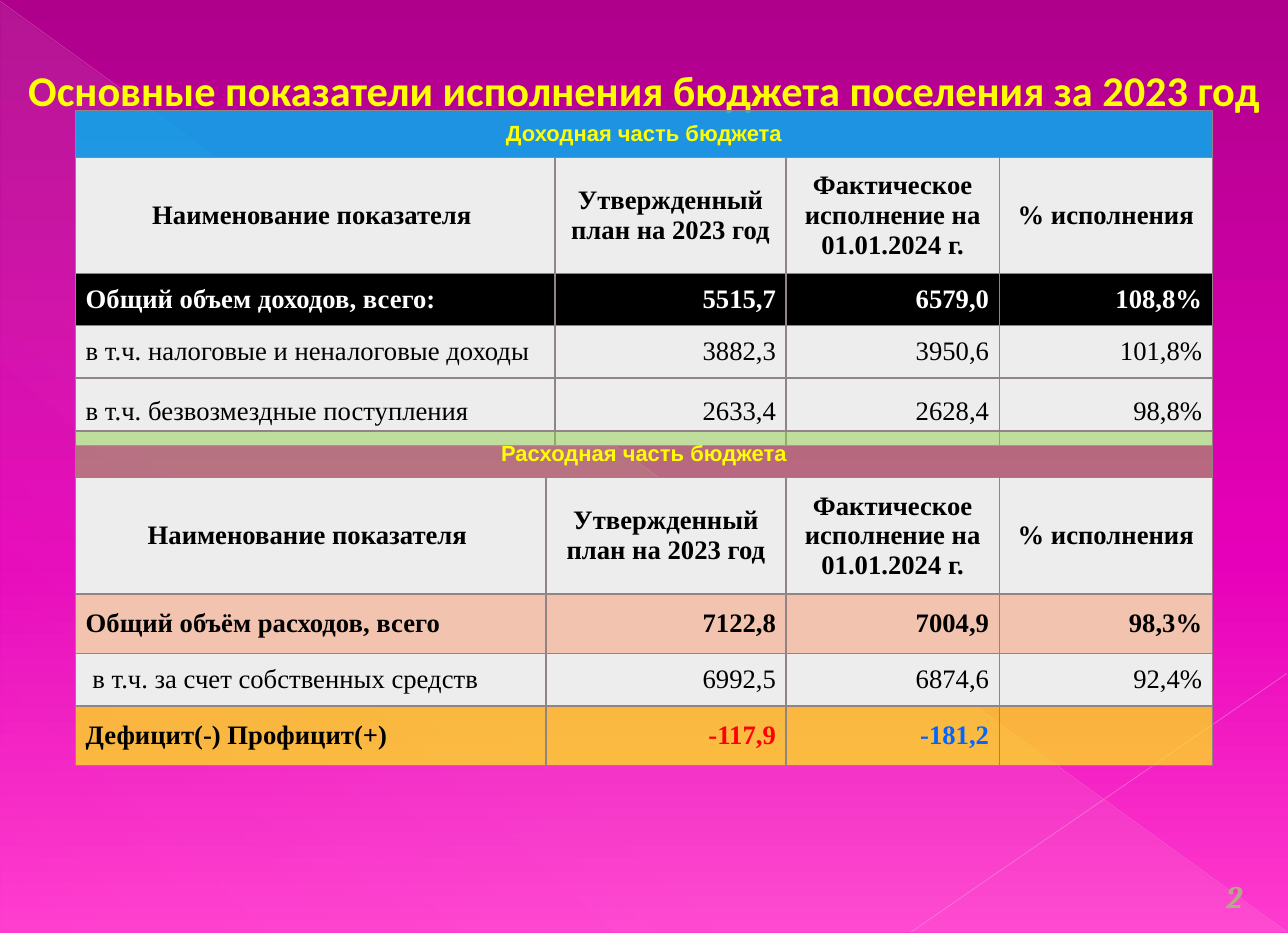
from lxml import etree
from pptx import Presentation
from pptx.dml.color import RGBColor
from pptx.enum.shapes import MSO_CONNECTOR, MSO_SHAPE
from pptx.enum.text import MSO_ANCHOR, PP_ALIGN
from pptx.oxml.ns import qn
from pptx.util import Inches, Pt

LEFT, CENTER, RIGHT = PP_ALIGN.LEFT, PP_ALIGN.CENTER, PP_ALIGN.RIGHT
MIDDLE, BOTTOM = MSO_ANCHOR.MIDDLE, MSO_ANCHOR.BOTTOM
STRAIGHT, TRIANGLE = MSO_CONNECTOR.STRAIGHT, MSO_SHAPE.RIGHT_TRIANGLE

# Content
TITLE = "Основные показатели исполнения бюджета поселения за 2023 год"
PAGE_NUMBER = "2"
HEADINGS = ("Наименование показателя ", "Утвержденный план на 2023 год",
            "Фактическое исполнение на 01.01.2024 г.", "% исполнения")

# Each row: style name, values
TABLES = (
    dict(top=0.98, columns=(4.25, 2.05, 1.89, 1.89), heights=(0.41, 1.02, 0.46, 0.46, 0.6), rows=(
        ("income", ("Доходная часть бюджета",)),
        ("heading", HEADINGS),
        ("income_total", ("Общий объем доходов, всего:", "5515,7", "6579,0", "108,8%")),
        ("detail", ("в т.ч. налоговые и неналоговые доходы", "3882,3", "3950,6", "101,8%")),
        ("detail", ("в т.ч. безвозмездные поступления", "2633,4", "2628,4", "98,8%")),
    )),
    dict(top=3.82, columns=(4.17, 2.13, 1.89, 1.89), heights=(0.41, 1.02, 0.53, 0.46, 0.53), rows=(
        ("expense", ("Расходная часть бюджета",)),
        ("heading", HEADINGS),
        ("expense_total", ("Общий объём расходов, всего", "7122,8", "7004,9", "98,3%")),
        ("detail", (" в т.ч. за счет собственных средств", "6992,5", "6874,6", "92,4%")),
        ("balance", ("Дефицит(-) Профицит(+)", "-117,9", "-181,2", "")),
    )),
)

# Theme: gradient stops are (position, colour, opacity);
# row styles are (fill, opacity, text colour, bold)
THEME = dict(
    background=((0, "AE008B", 100), (60, "E700B9", 100), (100, "FF3BCE", 100)),
    triangle=((0, "F4E7ED", 10), (70, "F4E7ED", 8), (100, "F4E7ED", 1)),
    border="918485", border_width=1,
    title=("Calibri", 27, "FFFF00"), number=("Cambria", 20, "B5A788"),
    section=("Arial", 14), body=("Times New Roman", 17),
    rows=dict(
        income=("00B0F0", 84, "FFFF00", True),
        expense=("92D050", 50, "FFFF00", True),
        heading=("EEEDED", 100, "000000", True),
        detail=("EEEDED", 100, "000000", False),
        income_total=("000000", 100, "FFFFFF", True),
        expense_total=("F2C4AF", 100, "000000", True),
        balance=("FFFF00", 67, "000000", True),
    ),
    balance_colors={1: "FF0000", 2: "0066FF"},
)
# Corner-to-corner lines: start, end, colour, width, opacity
DIAGONALS = (
    ((0, 0.01), (11.41, 8.26), "E9A8D7", 0.39, 35),
    ((11.41, 5.97), (8.08, 8.26), "EBB2DB", 0.47, 45),
)
TABLE_LEFT, CELL_MARGIN = 0.67, 0.09


def set_opacity(color, percent):
    if percent < 100:
        etree.SubElement(color, qn("a:alpha"), val=str(percent * 1000))


def set_gradient(fill, owner, stops, clockwise_angle):
    fill.gradient()
    fill.gradient_angle = 360 - clockwise_angle
    stop_list = next(owner.iter(qn("a:gsLst")))
    for old_stop in list(stop_list):
        stop_list.remove(old_stop)
    for position, value, percent in stops:
        stop = etree.SubElement(stop_list, qn("a:gs"), pos=str(position * 1000))
        set_opacity(etree.SubElement(stop, qn("a:srgbClr"), val=value), percent)


def write(frame, text, font, size, color, align, bold=True, italic=False):
    para = frame.paragraphs[0]
    para.alignment = align
    span = para.add_run()
    span.text = text
    span.font.name, span.font.size = font, Pt(size)
    span.font.bold, span.font.italic = bold, italic
    span.font.color.rgb = RGBColor.from_string(color)


def add_text(page, place, text, style, anchor, italic=False):
    frame = page.shapes.add_textbox(*map(Inches, place)).text_frame
    frame.word_wrap = True
    frame.vertical_anchor = anchor
    write(frame, text, *style, CENTER, italic=italic)


def add_diagonal(page, start, end, color, width, percent):
    line = page.shapes.add_connector(STRAIGHT, *map(Inches, start + end))
    line.line.width = Pt(width)
    line.line.color.rgb = RGBColor.from_string(color)
    set_opacity(next(line.element.iter(qn("a:srgbClr"))), percent)
    etree.SubElement(line.element.spPr, qn("a:effectLst"))


def style_cell(cell, color, percent):
    cell.vertical_anchor = MIDDLE
    cell.margin_left = cell.margin_right = Inches(CELL_MARGIN)
    cell.margin_top = cell.margin_bottom = Inches(CELL_MARGIN)
    cell.fill.solid()
    cell.fill.fore_color.rgb = RGBColor.from_string(color)
    properties = cell._tc.tcPr
    set_opacity(next(properties.iter(qn("a:srgbClr"))), percent)
    for index, side in enumerate(("lnL", "lnR", "lnT", "lnB")):
        border = etree.Element(qn("a:" + side), w=str(Pt(THEME["border_width"])))
        paint = etree.SubElement(border, qn("a:solidFill"))
        etree.SubElement(paint, qn("a:srgbClr"), val=THEME["border"])
        properties.insert(index, border)


def add_budget_table(page, top, columns, heights, rows):
    place = (TABLE_LEFT, top, sum(columns), sum(heights))
    table = page.shapes.add_table(len(rows), len(columns), *map(Inches, place)).table
    table.first_row = table.horz_banding = False
    for column, width in zip(table.columns, columns):
        column.width = Inches(width)
    for row, height in zip(table.rows, heights):
        row.height = Inches(height)
    table.cell(0, 0).merge(table.cell(0, len(columns) - 1))

    for r, (name, values) in enumerate(rows):
        fill, percent, color, bold = THEME["rows"][name]
        for c in range(len(columns)):
            style_cell(table.cell(r, c), fill, percent)
        font = THEME["section"] if r == 0 else THEME["body"]
        for c, value in enumerate(values):
            if not value:
                continue
            align = CENTER if r < 2 else RIGHT if c else LEFT
            tint = THEME["balance_colors"].get(c, color) if name == "balance" else color
            write(table.cell(r, c).text_frame, value, *font, tint, align, bold)


def main():
    deck = Presentation()
    deck.slide_width, deck.slide_height = Inches(11.42), Inches(8.27)
    page = deck.slides.add_slide(deck.slide_layouts[6])

    # Background and decoration
    set_gradient(page.background.fill, page.element, THEME["background"], 90)
    triangle = page.shapes.add_shape(TRIANGLE, *map(Inches, (0.01, 0.02, 11.4, 8.24)))
    triangle.shadow.inherit = False
    triangle.line.fill.background()
    set_gradient(triangle.fill, triangle.element, THEME["triangle"], 133)
    for diagonal in DIAGONALS:
        add_diagonal(page, *diagonal)

    # Page number, title and tables
    add_text(page, (10.66, 7.72, 0.57, 0.44), PAGE_NUMBER, THEME["number"], BOTTOM, italic=True)
    add_text(page, (0, 0.57, 11.42, 0.44), TITLE, THEME["title"], MIDDLE)
    for table in TABLES:
        add_budget_table(page, **table)

    deck.save("out.pptx")


if __name__ == "__main__":
    main()
